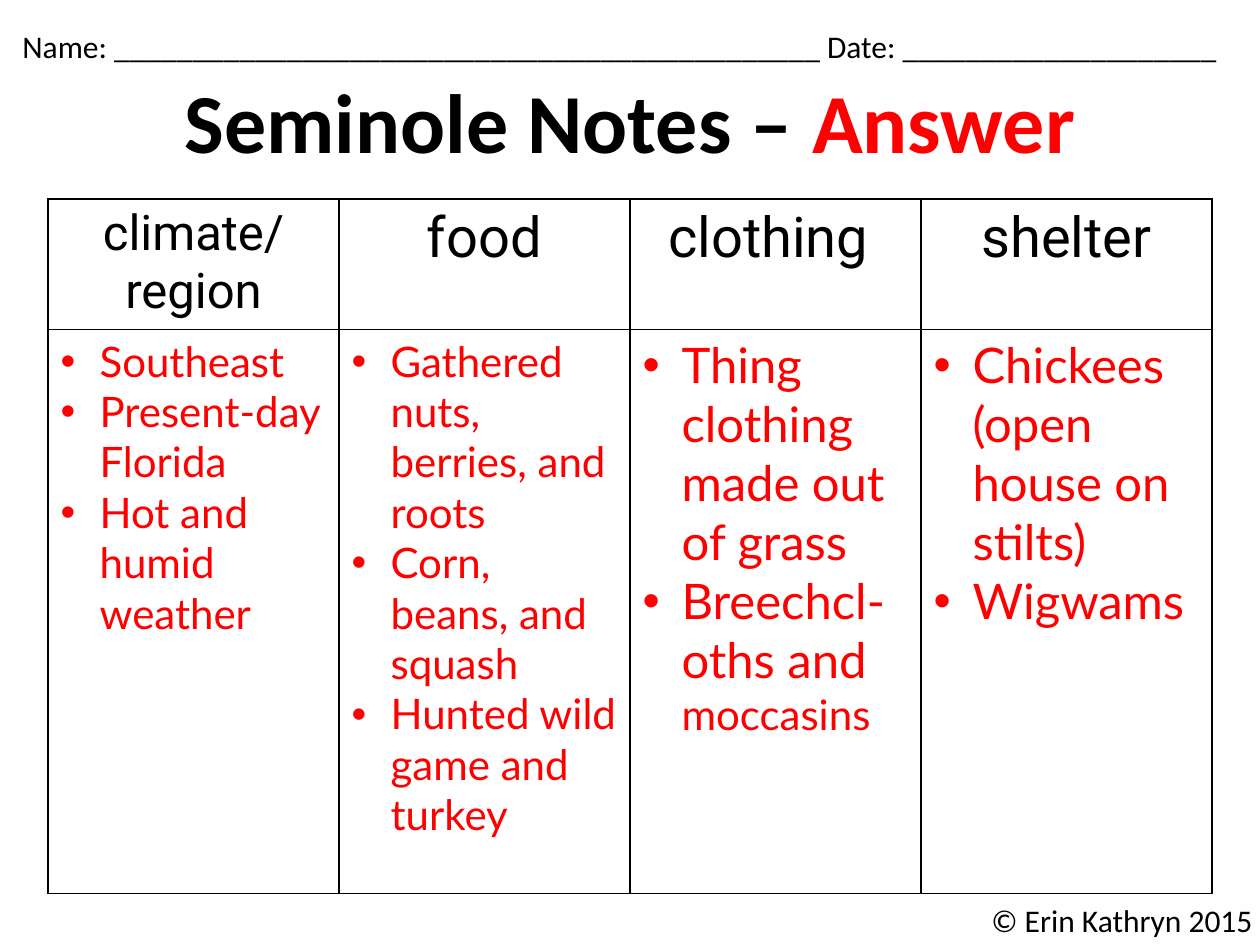
import pptx
import pptx.util
import pptx.dml.color
import pptx.enum.text
import pptx.oxml.ns
from lxml import etree

# Content: a paragraph is a list of (text, style) spans
NAME_LINE = [("Name: " + "_" * 45 + " Date: " + "_" * 20, "label")]
TITLE = [("Seminole Notes – ", "title"), ("Answer", "answer_title")]
CREDIT = [("© Erin Kathryn 2015", "label")]
COLUMNS = [
    ([("climate/region", "long_heading")],
     [[("Southeast", "note")],
      [("Present-day Florida", "note")],
      [("Hot and humid weather", "note")]]),
    ([("food", "heading")],
     [[("Gathered nuts, berries, and roots", "note")],
      [("Corn, beans, and squash", "note")],
      [("Hunted wild game and turkey", "note")]]),
    ([("clothing ", "heading")],
     [[("Thing clothing made out of grass", "big_note")],
      [("Breechcl-oths and ", "big_note"), ("moccasins", "note")]]),
    ([("shelter", "heading")],
     [[("Chickees (open house on stilts)", "big_note")],
      [("Wigwams", "big_note")]]),
]

# Theme: font, size, colour, bold
BLACK, RED, WHITE = "000000", "FF0000", "FFFFFF"
THEME = {
    "label": ("Calibri", 18, BLACK, False),
    "title": ("Calibri", 48, BLACK, True),
    "answer_title": ("Calibri", 48, RED, True),
    "heading": ("Roboto", 32, BLACK, False),
    "long_heading": ("Roboto", 28, BLACK, False),
    "note": ("Lato", 24, RED, False),
    "big_note": ("Lato", 28, RED, False),
}

# Layout in px
PAGE = (1260, 945)
NAME_AT = (10, 21, 1228, 51)
TITLE_AT = (130, 63, 1000, 115)
TABLE_AT = (48, 199, 1164, 672)
CREDIT_AT = (979, 895, 333, 51)
ROW_HEIGHTS = (108, 564)
INDENT = 39
ALIGN = pptx.enum.text.PP_ALIGN


def px(length):
    return pptx.util.Emu(round(length * 914400 / 126))


def rgb(colour):
    return pptx.dml.color.RGBColor.from_string(colour)


def write(para, spans, align=ALIGN.LEFT):
    para.alignment = align
    for text, style in spans:
        span = para.add_run()
        span.text = text
        name, size, colour, bold = THEME[style]
        values = {"name": name, "size": pptx.util.Pt(size), "bold": bold}
        for key, value in values.items():
            setattr(span.font, key, value)
        span.font.color.rgb = rgb(colour)


def place(shape, at):
    for key, value in zip(("left", "top", "width", "height"), at):
        setattr(shape, key, px(value))


def add_bullet(para):
    props = para._p.get_or_add_pPr()
    props.set("marL", str(px(INDENT)))
    props.set("indent", str(-px(INDENT)))
    for tag, key, value in (("a:buFont", "typeface", "Arial"), ("a:buChar", "char", "•")):
        etree.SubElement(props, pptx.oxml.ns.qn(tag)).set(key, value)


def style_cell(cell):
    props = cell._tc.get_or_add_tcPr()
    for side in ("a:lnL", "a:lnR", "a:lnT", "a:lnB"):
        line = etree.SubElement(props, pptx.oxml.ns.qn(side), w=str(pptx.util.Pt(1)))
        fill = etree.SubElement(line, pptx.oxml.ns.qn("a:solidFill"))
        etree.SubElement(fill, pptx.oxml.ns.qn("a:srgbClr"), val=BLACK)
    cell.fill.solid()
    cell.fill.fore_color.rgb = rgb(WHITE)


def add_label(page, at, spans):
    box = page.shapes.add_textbox(*map(px, at))
    box.text_frame.word_wrap = True
    write(box.text_frame.paragraphs[0], spans)


def add_title(page):
    title = page.shapes.title
    place(title, TITLE_AT)
    frame = title.text_frame
    values = {"word_wrap": True,
              "auto_size": pptx.enum.text.MSO_AUTO_SIZE.NONE,
              "vertical_anchor": pptx.enum.text.MSO_ANCHOR.TOP}
    for key, value in values.items():
        setattr(frame, key, value)
    write(frame.paragraphs[0], TITLE, ALIGN.CENTER)


def add_notes_table(page):
    table = page.shapes.add_table(2, len(COLUMNS), *map(px, TABLE_AT)).table
    table.first_row = table.horz_banding = False
    for row, height in zip(table.rows, ROW_HEIGHTS):
        row.height = px(height)
    for index, (heading, notes) in enumerate(COLUMNS):
        table.columns[index].width = px(TABLE_AT[2] / len(COLUMNS))
        head, body = table.cell(0, index), table.cell(1, index)
        style_cell(head)
        style_cell(body)
        write(head.text_frame.paragraphs[0], heading, ALIGN.CENTER)
        for number, spans in enumerate(notes):
            frame = body.text_frame
            para = frame.add_paragraph() if number else frame.paragraphs[0]
            add_bullet(para)
            write(para, spans)


def main():
    deck = pptx.Presentation()
    deck.slide_width, deck.slide_height = map(px, PAGE)
    page = deck.slides.add_slide(deck.slide_layouts[5])
    add_label(page, NAME_AT, NAME_LINE)
    add_title(page)
    add_notes_table(page)
    add_label(page, CREDIT_AT, CREDIT)
    deck.save("out.pptx")


if __name__ == "__main__":
    main()
